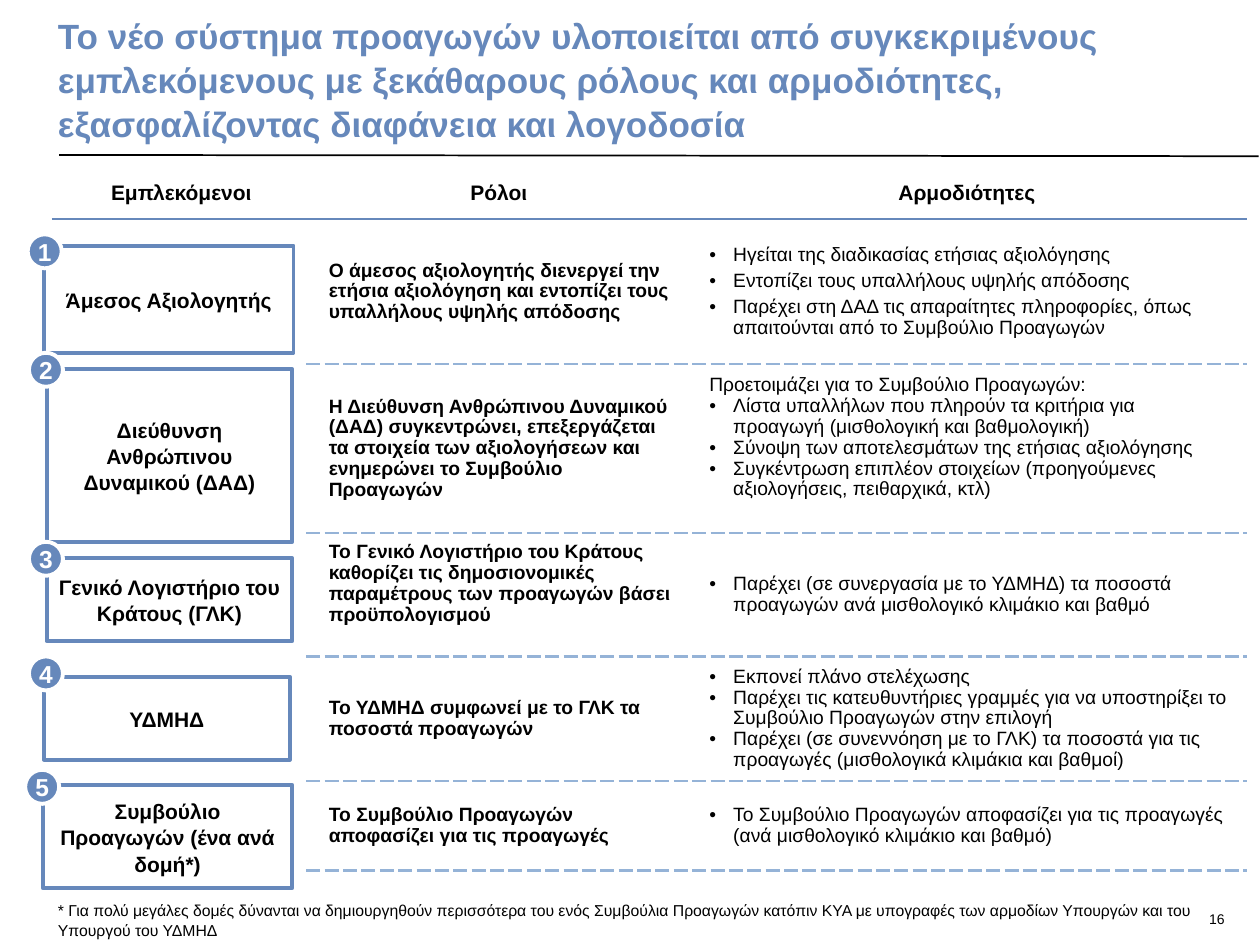
from lxml import etree
from pptx import Presentation
from pptx.dml.color import RGBColor
from pptx.enum.shapes import MSO_CONNECTOR, MSO_SHAPE
from pptx.enum.text import MSO_ANCHOR as ANCHOR, PP_ALIGN as ALIGN
from pptx.oxml.ns import qn
from pptx.util import Inches, Pt

BLUE = RGBColor(0x66, 0x88, 0xBB)
LIGHT_BLUE = RGBColor(0x95, 0xB3, 0xD7)
WHITE = RGBColor(0xFF, 0xFF, 0xFF)
BLACK = RGBColor(0, 0, 0)

# Content
TITLE = ("Το νέο σύστημα προαγωγών υλοποιείται από συγκεκριμένους εμπλεκόμενους "
         "με ξεκάθαρους ρόλους και αρμοδιότητες, εξασφαλίζοντας διαφάνεια και λογοδοσία")
FOOTNOTE = ("* Για πολύ μεγάλες δομές δύνανται να δημιουργηθούν περισσότερα του ενός "
            "Συμβούλια Προαγωγών κατόπιν ΚΥΑ με υπογραφές των αρμοδίων Υπουργών και του "
            "Υπουργού του ΥΔΜΗΔ")
PAGE_NUMBER = "16"
HEADERS = ["Εμπλεκόμενοι", "Ρόλοι", "Αρμοδιότητες"]
DUTIES_INTRO = "Προετοιμάζει για το Συμβούλιο Προαγωγών:"
ROWS = [  # role, duties
    ("Ο άμεσος αξιολογητής διενεργεί την ετήσια αξιολόγηση και εντοπίζει τους "
     "υπαλλήλους υψηλής απόδοσης",
     ["Ηγείται της διαδικασίας ετήσιας αξιολόγησης",
      "Εντοπίζει τους υπαλλήλους υψηλής απόδοσης",
      "Παρέχει στη ΔΑΔ τις απαραίτητες πληροφορίες, όπως απαιτούνται από το "
      "Συμβούλιο Προαγωγών"]),
    ("Η Διεύθυνση Ανθρώπινου Δυναμικού (ΔΑΔ) συγκεντρώνει, επεξεργάζεται τα στοιχεία "
     "των αξιολογήσεων και ενημερώνει το Συμβούλιο Προαγωγών",
     [DUTIES_INTRO,
      "Λίστα υπαλλήλων που πληρούν τα κριτήρια για προαγωγή (μισθολογική και βαθμολογική)",
      "Σύνοψη των αποτελεσμάτων της ετήσιας αξιολόγησης",
      "Συγκέντρωση επιπλέον στοιχείων (προηγούμενες αξιολογήσεις, πειθαρχικά, κτλ)"]),
    ("Το Γενικό Λογιστήριο του Κράτους καθορίζει τις δημοσιονομικές παραμέτρους των "
     "προαγωγών βάσει προϋπολογισμού",
     ["Παρέχει (σε συνεργασία με το ΥΔΜΗΔ) τα ποσοστά προαγωγών ανά μισθολογικό "
      "κλιμάκιο και βαθμό"]),
    ("Το ΥΔΜΗΔ συμφωνεί με το ΓΛΚ τα ποσοστά προαγωγών",
     ["Εκπονεί πλάνο στελέχωσης",
      "Παρέχει τις κατευθυντήριες γραμμές για να υποστηρίξει το Συμβούλιο Προαγωγών "
      "στην επιλογή",
      "Παρέχει (σε συνεννόηση με το ΓΛΚ) τα ποσοστά για τις προαγωγές (μισθολογικά "
      "κλιμάκια και βαθμοί)"]),
    ("Το Συμβούλιο Προαγωγών αποφασίζει για τις προαγωγές",
     ["Το Συμβούλιο Προαγωγών αποφασίζει για τις προαγωγές (ανά μισθολογικό κλιμάκιο "
      "και βαθμό)"]),
]
ACTORS = [  # name, frame (left, top, width, height), badge (left, top)
    ("Άμεσος Αξιολογητής", (0.35, 1.95, 1.98, 0.85), (0.22, 1.86)),
    ("Διεύθυνση Ανθρώπινου Δυναμικού (ΔΑΔ)", (0.37, 2.93, 1.95, 1.37), (0.23, 2.8)),
    ("Γενικό Λογιστήριο του Κράτους (ΓΛΚ)", (0.37, 4.43, 1.95, 0.66), (0.23, 4.3)),
    ("ΥΔΜΗΔ", (0.35, 5.37, 1.95, 0.66), (0.23, 5.21)),
    ("Συμβούλιο Προαγωγών (ένα ανά δομή*)", (0.34, 6.23, 1.98, 0.82), (0.2, 6.11)),
]
COLUMN_WIDTHS = [2.02, 3.02, 4.41]
ROW_HEIGHTS = [0.41, 1.15, 1.33, 0.98, 0.98, 0.71]
RAISED_CELLS = {(2, 2), (3, 1)}  # text sits a little above the middle
BADGE_SIZE = 0.27


def style(para, size, color=BLACK, bold=False, align=ALIGN.LEFT):
    para.alignment = align
    para.font.name = "Arial"
    para.font.size = Pt(size)
    para.font.bold = bold
    para.font.color.rgb = color


def set_margins(target, left, top, right, bottom):
    target.margin_left, target.margin_top = Inches(left), Inches(top)
    target.margin_right, target.margin_bottom = Inches(right), Inches(bottom)


def add_text(page, text, place, size, color=BLACK, bold=False, align=ALIGN.LEFT,
             anchor=ANCHOR.TOP, top_margin=0):
    frame = page.shapes.add_textbox(*map(Inches, place)).text_frame
    frame.word_wrap = True
    frame.vertical_anchor = anchor
    set_margins(frame, 0, top_margin, 0, 0)
    para = frame.paragraphs[0]
    para.text = text
    para.line_spacing = 1.05
    style(para, size, color, bold, align)


def add_panel(page, kind, text, place, fill, line, size, color, margin, wrap):
    panel = page.shapes.add_shape(kind, *map(Inches, place))
    panel.shadow.inherit = False
    if fill is None:
        panel.fill.background()
    else:
        panel.fill.solid()
        panel.fill.fore_color.rgb = fill
    panel.line.color.rgb = line
    panel.line.width = Pt(2.25)
    frame = panel.text_frame
    frame.word_wrap = wrap
    frame.vertical_anchor = ANCHOR.MIDDLE
    set_margins(frame, *[margin] * 4)
    para = frame.paragraphs[0]
    para.text = text
    style(para, size, color, True, ALIGN.CENTER)
    return para


def add_bullet(para):
    props = para._p.get_or_add_pPr()
    props.set("marL", str(Inches(0.19)))
    props.set("indent", str(-Inches(0.19)))
    etree.SubElement(props, qn("a:buFont")).set("typeface", "Arial")
    etree.SubElement(props, qn("a:buChar")).set("char", "•")


def set_borders(cell, borders):
    """Borders are (color, points, dash) in the order left, right, top, bottom."""
    props = cell._tc.get_or_add_tcPr()
    for index, (side, (color, points, dash)) in enumerate(zip("LRTB", borders)):
        line = etree.Element(qn(f"a:ln{side}"), w=str(Pt(points)))
        fill = etree.SubElement(line, qn("a:solidFill"))
        etree.SubElement(fill, qn("a:srgbClr"), val=str(color))
        etree.SubElement(line, qn("a:prstDash"), val=dash)
        props.insert(index, line)


def fill_cell(cell, row, column):
    cell.vertical_anchor = ANCHOR.MIDDLE
    frame = cell.text_frame
    if row == 0:
        frame.text = HEADERS[column]
        style(frame.paragraphs[0], 12, bold=True, align=ALIGN.CENTER)
        return
    if column == 0:
        return
    raised = 0.17 if (row, column) in RAISED_CELLS else 0
    set_margins(cell, 0.16, 0.05, 0.1, 0.05 + raised)
    role, duties = ROWS[row - 1]
    lines = [role] if column == 1 else duties
    for index, text in enumerate(lines):
        para = frame.paragraphs[0] if index == 0 else frame.add_paragraph()
        para.text = text
        para.line_spacing = 0.97
        if row == 1 and index > 0:
            para.space_before = Pt(3)
        if column == 2 and text != DUTIES_INTRO:
            add_bullet(para)
        style(para, 11, bold=column == 1)


def add_roles_table(page):
    table = page.shapes.add_table(
        len(ROW_HEIGHTS), len(COLUMN_WIDTHS), Inches(0.43), Inches(1.33),
        Inches(sum(COLUMN_WIDTHS)), Inches(sum(ROW_HEIGHTS))).table
    table.first_row = table.horz_banding = False
    for column, width in zip(table.columns, COLUMN_WIDTHS):
        column.width = Inches(width)
    for row, height in zip(table.rows, ROW_HEIGHTS):
        row.height = Inches(height)
    blank, rule = (WHITE, 3, "solid"), (BLUE, 1.5, "solid")
    dashes = (LIGHT_BLUE, 1.5, "sysDash")
    for row in range(len(ROW_HEIGHTS)):
        for column in range(len(COLUMN_WIDTHS)):
            cell = table.cell(row, column)
            fill_cell(cell, row, column)
            cell.fill.solid()
            cell.fill.fore_color.rgb = WHITE
            inner = blank if column == 0 else dashes
            top = blank if row == 0 else rule if row == 1 else inner
            bottom = rule if row == 0 else inner
            set_borders(cell, [blank, blank, top, bottom])


def main():
    deck = Presentation()
    deck.slide_width, deck.slide_height = Inches(10), Inches(7.5)
    page = deck.slides.add_slide(deck.slide_layouts[6])

    # Title, rule below it and page number
    rule = page.shapes.add_connector(
        MSO_CONNECTOR.STRAIGHT, Inches(0.47), Inches(1.23), Inches(9.99), Inches(1.24))
    rule.line.color.rgb = BLACK
    rule.line.width = Pt(1)
    etree.SubElement(rule._element.spPr, qn("a:effectLst"))
    add_text(page, PAGE_NUMBER, (9.29, 7.18, 0.43, 0.25), 8, align=ALIGN.RIGHT,
             top_margin=0.04)
    add_text(page, TITLE, (0.46, 0.2, 9.42, 0.95), 20, BLUE, True, anchor=ANCHOR.BOTTOM)

    add_roles_table(page)

    # Numbered actors over the first column
    for number, (name, place, corner) in enumerate(ACTORS, 1):
        para = add_panel(page, MSO_SHAPE.RECTANGLE, name, place, None, BLUE, 12, BLACK,
                         0.08, True)
        para.space_after = Pt(3)
        para.line_spacing = 1.05
        add_panel(page, MSO_SHAPE.OVAL, str(number), (*corner, BADGE_SIZE, BADGE_SIZE),
                  BLUE, WHITE, 14, WHITE, 0, False)

    add_text(page, FOOTNOTE, (0.46, 7.14, 9.19, 0.45), 9)
    deck.save("out.pptx")


if __name__ == "__main__":
    main()
